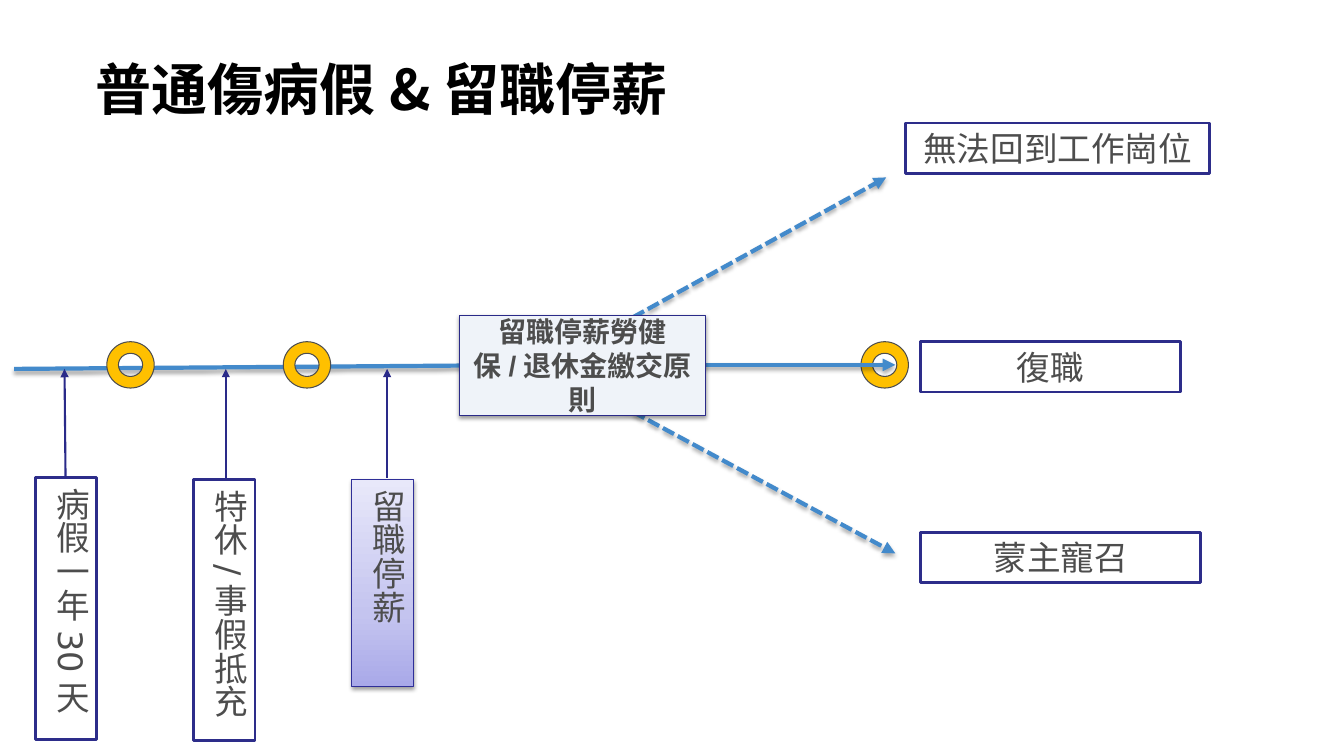
"""Build a one-slide timeline of sick leave and unpaid leave with its outcomes."""
from lxml import etree
from pptx import Presentation
from pptx.dml.color import RGBColor
from pptx.enum.dml import MSO_LINE
from pptx.enum.shapes import MSO_CONNECTOR, MSO_SHAPE
from pptx.enum.text import MSO_ANCHOR, PP_ALIGN
from pptx.oxml.ns import qn
from pptx.util import Inches, Pt

STRAIGHT = MSO_CONNECTOR.STRAIGHT
DONUT, RECTANGLE = MSO_SHAPE.DONUT, MSO_SHAPE.RECTANGLE
DASHED = MSO_LINE.SQUARE_DOT
TOP, MIDDLE = MSO_ANCHOR.TOP, MSO_ANCHOR.MIDDLE
LEFT, CENTER = PP_ALIGN.LEFT, PP_ALIGN.CENTER

COLORS = {
    "title": "000000", "text": "4D4D4D", "flow": "438ACB", "ring": "FFC000",
    "frame": "2D2D8A", "thin": "2A2A89", "leave_line": "2F2F98",
    "white": "FFFFFF", "center": "EFF3F9",
}
LEAVE_GRADIENT = [(0, "A9A9E9"), (35, "C4C4EF"), (100, "E8E8FA")]
EAST_ASIAN_FONT = "Noto Sans CJK SC"

TITLE = "普通傷病假&留職停薪"
CENTER_TEXT = "留職停薪勞健保/退休金繳交原則"
CENTER_BOX = (4.56, 3.13, 2.44, 0.99)
RING_LEFTS = [1.06, 2.81, 8.54]
RING_TOP, RING_WIDTH, RING_HEIGHT = 3.39, 0.47, 0.46
FLOWS = [
    ((0.14, 3.66), (5.52, 3.62), False),
    ((5.84, 3.62), (8.88, 3.62), False),
    ((5.84, 3.85), (8.88, 5.49), True),
    ((5.84, 3.39), (8.79, 1.76), True),
]
STAGES = [
    ("病假一年30天", (0.35, 4.74, 0.61, 2.6), (0.65, 0.64)),
    ("特休/事假抵充", (1.92, 4.76, 0.61, 2.59), (2.24, 2.24)),
    ("留職停薪", (3.49, 4.76, 0.61, 2.05), (3.84, 3.84)),
]
POINTER_BOTTOM, POINTER_TOP = 4.74, 3.66
OUTCOMES = [
    ("復職", (9.13, 3.39, 2.58, 0.5)),
    ("蒙主寵召", (9.13, 5.28, 2.78, 0.5)),
    ("無法回到工作崗位", (8.98, 1.22, 3.02, 0.5)),
]


def rgb(name):
    return RGBColor.from_string(COLORS[name])


def add_element(parent, tag, **attributes):
    element = etree.SubElement(parent, qn(tag))
    for key, value in attributes.items():
        element.set(key, str(value))
    return element


def set_shadow(shape, opacity=0, distance=0):
    """Leave the shape without a shadow unless an opacity is given."""
    effects = add_element(shape._element.spPr, "a:effectLst")
    if opacity:
        shadow = add_element(effects, "a:outerShdw", blurRad=Pt(3.1), dist=Pt(distance),
                             dir=5400000, rotWithShape=0)
        color = add_element(shadow, "a:srgbClr", val="000000")
        add_element(color, "a:alpha", val=opacity * 1000)


def set_gradient(shape, stops):
    shape.fill.gradient()
    shape.fill.gradient_angle = 90
    stop_list = shape._element.spPr.find(qn("a:gradFill")).find(qn("a:gsLst"))
    for stop in list(stop_list):
        stop_list.remove(stop)
    for position, color in stops:
        stop = add_element(stop_list, "a:gs", pos=position * 1000)
        add_element(stop, "a:srgbClr", val=color)


def format_text(shape, text, size, font_name, color, bold=False, align=LEFT, anchor=TOP):
    frame = shape.text_frame
    frame.text = text
    frame.word_wrap = True
    frame.vertical_anchor = anchor
    paragraph = frame.paragraphs[0]
    paragraph.alignment = align
    font = paragraph.runs[0].font
    font.size, font.name, font.bold = Pt(size), font_name, bold
    font.color.rgb = rgb(color)
    add_element(font._element, "a:ea", typeface=EAST_ASIAN_FONT)


def add_figure(slide, kind, box, fill, line, width):
    shape = slide.shapes.add_shape(kind, *map(Inches, box))
    shape.fill.solid()
    shape.fill.fore_color.rgb = rgb(fill)
    shape.line.color.rgb = rgb(line)
    shape.line.width = Pt(width)
    return shape


def add_arrow(slide, start, end, color, width, dashed=False):
    arrow = slide.shapes.add_connector(STRAIGHT, *map(Inches, start + end))
    arrow.line.color.rgb = rgb(color)
    arrow.line.width = Pt(width)
    if dashed:
        arrow.line.dash_style = DASHED
    add_element(arrow.line._get_or_add_ln(), "a:tailEnd", type="triangle")
    return arrow


def add_flow(slide, start, end, dashed):
    set_shadow(add_arrow(slide, start, end, "flow", 3, dashed), 35, 1.8)


def add_title(slide):
    title = slide.shapes.title
    title.left, title.top, title.width, title.height = map(Inches, (0.89, 0.44, 11.23, 0.87))
    format_text(title, TITLE, 40, EAST_ASIAN_FONT, "title", bold=True, anchor=MIDDLE)
    frame = title.text_frame
    frame.margin_left = frame.margin_top = frame.margin_bottom = Inches(0.06)
    properties = frame.paragraphs[0]._p.get_or_add_pPr()
    properties.set("marL", str(Inches(0.04)))
    properties.set("indent", str(Inches(-0.04)))


def add_stage(slide, text, box, pointer, is_leave):
    line, width = ("leave_line", 0.75) if is_leave else ("frame", 2)
    shape = add_figure(slide, RECTANGLE, box, "white", line, width)
    if is_leave:
        set_gradient(shape, LEAVE_GRADIENT)
        set_shadow(shape, 38, 1.6)
    else:
        set_shadow(shape)
    format_text(shape, text, 24, "DejaVu Sans", "text")
    shape.text_frame._txBody.bodyPr.set("vert", "eaVert")
    start_x, end_x = pointer
    set_shadow(add_arrow(slide, (start_x, POINTER_BOTTOM), (end_x, POINTER_TOP), "thin", 1.5))


def main():
    presentation = Presentation()
    presentation.slide_width, presentation.slide_height = Inches(13.33), Inches(7.5)
    slide = presentation.slides.add_slide(presentation.slide_layouts[5])
    add_title(slide)

    add_flow(slide, *FLOWS[0])
    for left in RING_LEFTS:
        box = (left, RING_TOP, RING_WIDTH, RING_HEIGHT)
        set_shadow(add_figure(slide, DONUT, box, "ring", "text", 0.75))
    for flow in FLOWS[1:]:
        add_flow(slide, *flow)

    for stage in STAGES:
        add_stage(slide, *stage, is_leave=stage is STAGES[-1])
    for text, box in OUTCOMES:
        shape = add_figure(slide, RECTANGLE, box, "white", "frame", 2)
        set_shadow(shape)
        format_text(shape, text, 24, "DejaVu Sans", "text", align=CENTER)

    center = add_figure(slide, RECTANGLE, CENTER_BOX, "center", "thin", 0.75)
    set_shadow(center, 38, 1.6)
    format_text(center, CENTER_TEXT, 20, "Arial", "text", True, CENTER, MIDDLE)
    presentation.save("out.pptx")


if __name__ == "__main__":
    main()
